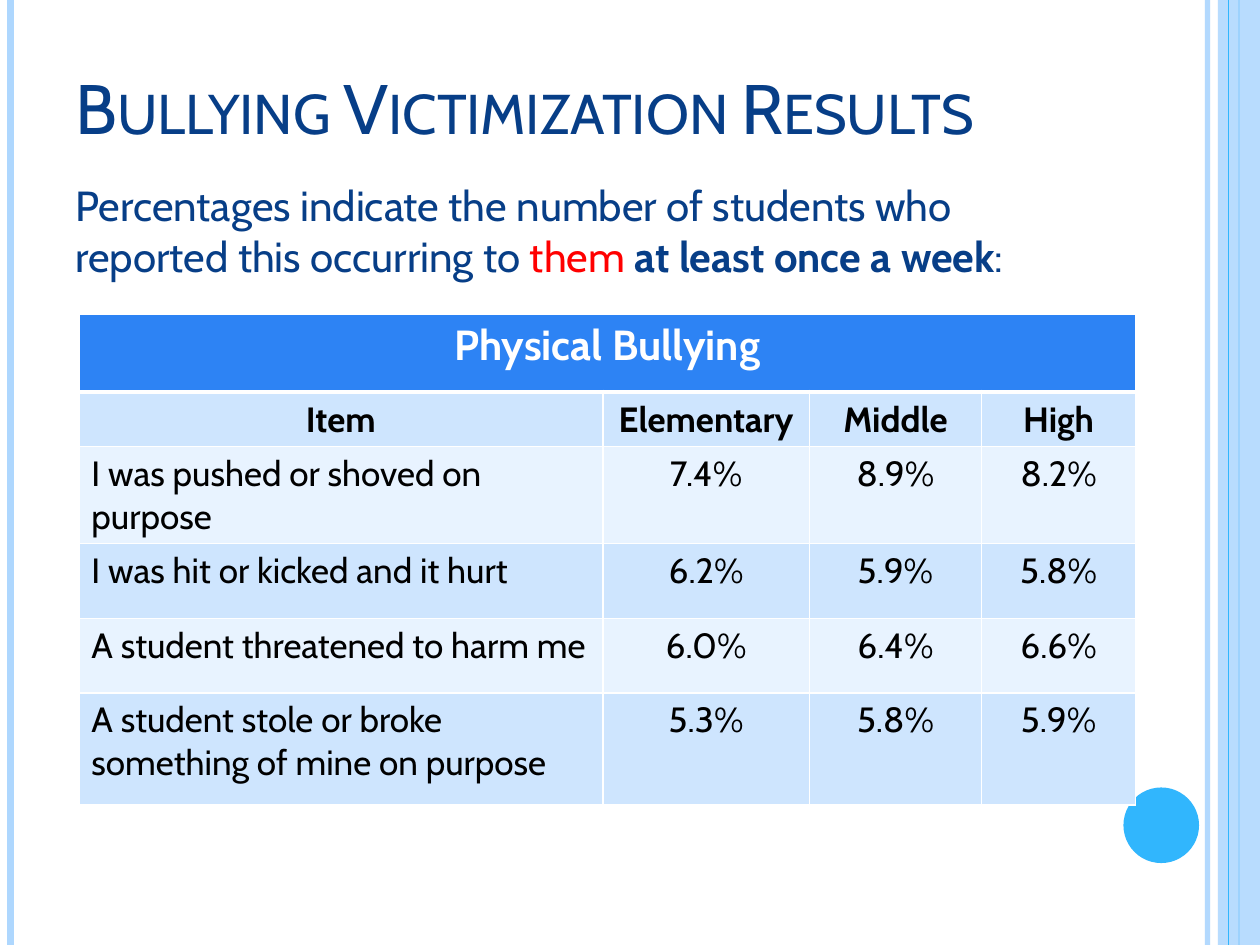
from lxml import etree
from pptx import Presentation
from pptx.dml.color import RGBColor
from pptx.enum.shapes import MSO_CONNECTOR, MSO_SHAPE
from pptx.enum.text import MSO_ANCHOR, PP_ALIGN
from pptx.oxml.ns import qn
from pptx.util import Pt

STRAIGHT = MSO_CONNECTOR.STRAIGHT
RECTANGLE, OVAL = MSO_SHAPE.RECTANGLE, MSO_SHAPE.OVAL
BOTTOM = MSO_ANCHOR.BOTTOM
LEFT, CENTER = PP_ALIGN.LEFT, PP_ALIGN.CENTER

FONT = "Cabin"
NAVY, RED, WHITE, BLACK = "073E87", "FF0000", "FFFFFF", "000000"
PALE, SKY = "AED7FE", "31B6FD"
HEADER, BAND_DARK, BAND_LIGHT = "2D83F4", "CEE5FE", "E8F3FF"
WIDTH, HEIGHT = 720, 540

COLUMN_WIDTHS = [299.5, 118, 98.5, 88]
ROW_HEIGHTS = [44.5, 29.5, 44, 43, 42.5, 64]
ROWS = [
    ("Item", "Elementary", "Middle", "High"),
    ("I was pushed or shoved on purpose", "7.4%", "8.9%", "8.2%"),
    ("I was hit or kicked and it hurt", "6.2%", "5.9%", "5.8%"),
    ("A student threatened to harm me", "6.0%", "6.4%", "6.6%"),
    ("A student stole or broke something of mine on purpose",
     "5.3%", "5.8%", "5.9%"),
]


def paint(color_format, color, opacity=100):
    color_format.rgb = RGBColor.from_string(color)
    if opacity < 100:
        node = color_format._xFill.find(qn("a:srgbClr"))
        etree.SubElement(node, qn("a:alpha"), val=str(opacity * 1000))


def style_font(font, size, color, bold=False):
    font.name, font.size, font.bold = FONT, Pt(size), bold
    paint(font.color, color)


def add_stripe(slide, x, weight, color, opacity=100):
    stripe = slide.shapes.add_connector(STRAIGHT, Pt(x), 0, Pt(x), Pt(HEIGHT))
    stripe.line.width = Pt(weight)
    stripe.line.fill.solid()
    paint(stripe.line.fill.fore_color, color, opacity)
    etree.SubElement(stripe._element.spPr, qn("a:effectLst"))


def add_solid(slide, kind, box, color, opacity=100):
    solid = slide.shapes.add_shape(kind, *map(Pt, box))
    solid.shadow.inherit = False
    solid.fill.solid()
    paint(solid.fill.fore_color, color, opacity)
    solid.line.fill.background()


def add_decoration(slide):
    add_stripe(slide, 690, 3, PALE, 93)
    add_stripe(slide, 6, 4.5, PALE)
    add_stripe(slide, 708, 1.5, SKY)
    add_solid(slide, RECTANGLE, (696, 0, WIDTH - 696, HEIGHT), PALE, 87)
    add_stripe(slide, 702, 0.75, SKY)
    add_solid(slide, OVAL, (642, 450, 43.2, 43.2), SKY)


def add_text(slide, box):
    frame = slide.shapes.add_textbox(*map(Pt, box)).text_frame
    frame.word_wrap = True
    frame.vertical_anchor = BOTTOM
    return frame.paragraphs[0]


def add_title(slide, box):
    title = add_text(slide, box)
    run = title.add_run()
    run.text = "Bullying Victimization Results"
    style_font(run.font, 40, NAVY)
    run.font._element.set("cap", "small")


def add_introduction(slide, box):
    introduction = add_text(slide, box)
    for text, color, bold in [
        ("Percentages indicate the number of students who reported this "
         "occurring to ", NAVY, False),
        ("them ", RED, False),
        ("at least once a week", NAVY, True),
        (":", NAVY, False),
    ]:
        run = introduction.add_run()
        run.text = text
        style_font(run.font, 24, color, bold)


def set_borders(cell, top, bottom):
    properties = cell._tc.get_or_add_tcPr()
    sides = [("lnL", 1), ("lnR", 1), ("lnT", top), ("lnB", bottom)]
    # Borders come before the fill in the cell properties
    for index, (side, weight) in enumerate(sides):
        border = etree.Element(qn(f"a:{side}"), w=str(Pt(weight)))
        fill = etree.SubElement(border, qn("a:solidFill"))
        etree.SubElement(fill, qn("a:srgbClr"), val=WHITE)
        properties.insert(index, border)


def fill_cell(cell, text, fill, size, color, bold, align, top=1, bottom=1):
    cell.fill.solid()
    paint(cell.fill.fore_color, fill)
    set_borders(cell, top, bottom)
    paragraph = cell.text_frame.paragraphs[0]
    paragraph.alignment = align
    style_font(paragraph.font, size, color, bold)
    if text:
        paragraph.add_run().text = text


def add_results_table(slide, left, top):
    table = slide.shapes.add_table(
        len(ROW_HEIGHTS), len(COLUMN_WIDTHS), Pt(left), Pt(top),
        Pt(sum(COLUMN_WIDTHS)), Pt(sum(ROW_HEIGHTS))).table
    for column, width in zip(table.columns, COLUMN_WIDTHS):
        column.width = Pt(width)
    for row, height in zip(table.rows, ROW_HEIGHTS):
        row.height = Pt(height)

    # Heading across all columns
    for c in range(len(COLUMN_WIDTHS)):
        fill_cell(table.cell(0, c), "" if c else "Physical Bullying",
                  HEADER, 24, WHITE, True, CENTER, bottom=3)
    table.cell(0, 0).merge(table.cell(0, len(COLUMN_WIDTHS) - 1))

    # Column names and banded results
    for r, values in enumerate(ROWS, 1):
        names = r == 1
        for c, text in enumerate(values):
            fill_cell(table.cell(r, c), text,
                      BAND_DARK if r % 2 else BAND_LIGHT, 20, BLACK, names,
                      CENTER if names or c else LEFT, top=3 if names else 1)


def main():
    presentation = Presentation()
    presentation.slide_width, presentation.slide_height = Pt(WIDTH), Pt(HEIGHT)
    slide = presentation.slides.add_slide(presentation.slide_layouts[6])
    add_decoration(slide)
    add_title(slide, (36, 23, 588, 65.5))
    add_introduction(slide, (36, 78.5, 597, 85.5))
    add_results_table(slide, 45, 179.5)
    presentation.save("out.pptx")


if __name__ == "__main__":
    main()
